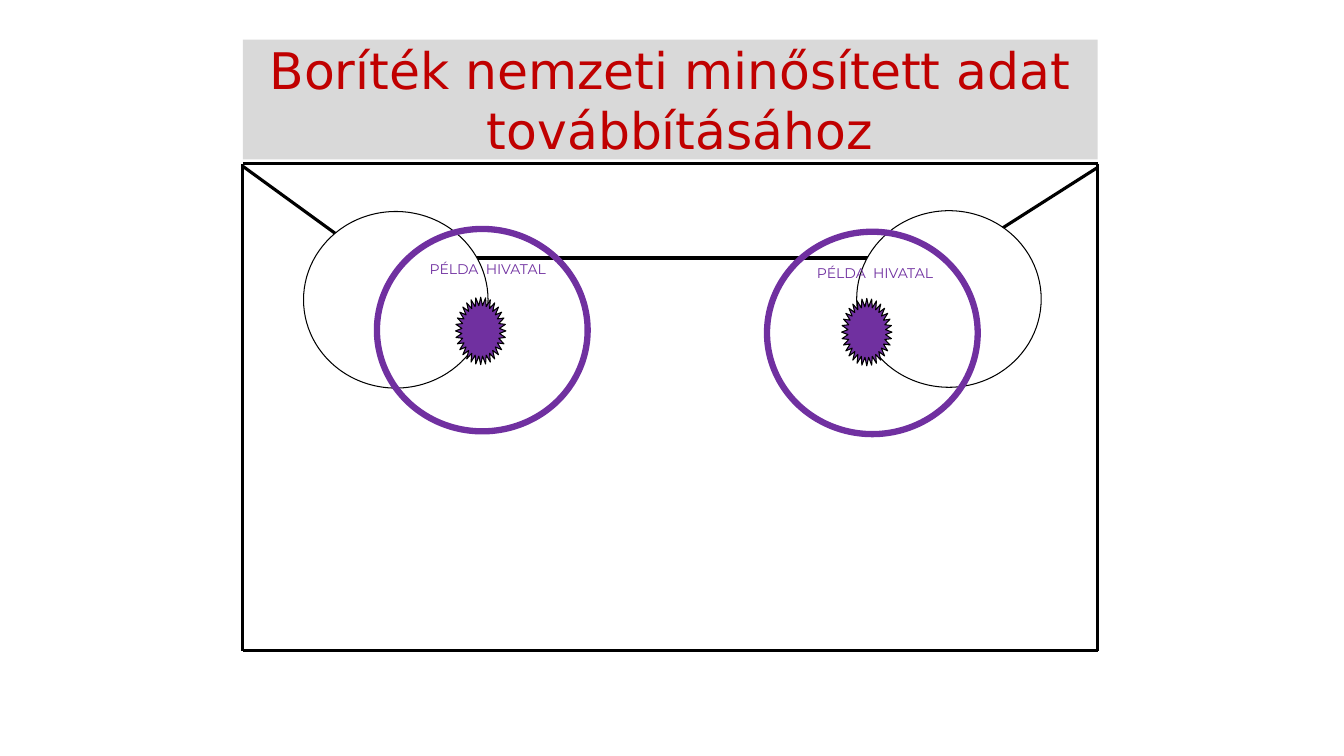
from pptx import Presentation
from pptx.dml.color import RGBColor
from pptx.enum.shapes import MSO_CONNECTOR, MSO_SHAPE
from pptx.enum.text import MSO_ANCHOR, PP_ALIGN
from pptx.oxml.ns import qn
from pptx.util import Cm, Pt
from lxml.etree import SubElement

TITLE = "Boríték nemzeti minősített adat továbbításához"
OFFICE = "PÉLDA  HIVATAL"
BLACK, WHITE, GRAY = "000000", "FFFFFF", "D9D9D9"
PURPLE, RED = "7030A0", "C00000"

# Lengths in cm
WIDE, HIGH = 33.87, 19.05
LEFT, TOP, RIGHT, BOTTOM = 6.12, 4.12, 27.66, 16.4
FOLD = 6.5
EDGES = [
    (LEFT, TOP, RIGHT, TOP),
    (LEFT, BOTTOM, RIGHT, BOTTOM),
    (LEFT, TOP, LEFT, BOTTOM),
    (RIGHT, TOP, RIGHT, BOTTOM),
]
FLAP = [
    (LEFT, 4.19, 9.3, FOLD),
    (9.3, FOLD, 24.15, FOLD),
    (RIGHT, 4.22, 24.08, FOLD),
]
DISCS = [(7.65, 5.33), (21.59, 5.31)]
DISC = (4.65, 4.45)
# Corners of ring, label and star for each seal
SEALS = [
    ((9.5, 5.77), (10.36, 6.45), (11.48, 7.49)),
    ((19.33, 5.84), (20.12, 6.53), (21.21, 7.52)),
]
RING, LABEL, STAR = (5.31, 5.1), (3.86, 3.71), (1.27, 1.7)


def tint(code):
    return RGBColor.from_string(code)


def draw_line(ends):
    line = slide.shapes.add_connector(MSO_CONNECTOR.STRAIGHT, *map(Cm, ends))
    line.line.color.rgb = tint(BLACK)
    line.line.width = Pt(2.25)
    SubElement(line._element.spPr, qn("a:effectLst"))


def draw_shape(kind, spot, size, fill=None, edge=None, width=0.75):
    shape = slide.shapes.add_shape(kind, *map(Cm, spot + size))
    shape.shadow.inherit = False
    if fill:
        shape.fill.solid()
        shape.fill.fore_color.rgb = tint(fill)
    else:
        shape.fill.background()
    if edge:
        shape.line.color.rgb = tint(edge)
        shape.line.width = Pt(width)
    else:
        shape.line.fill.background()
    return shape


def write(shape, text, color, anchor, wrap, **style):
    frame = shape.text_frame
    frame.word_wrap = wrap
    frame.vertical_anchor = anchor
    para = frame.paragraphs[0]
    para.alignment = PP_ALIGN.CENTER
    run = para.add_run()
    run.text = text
    for key, value in style.items():
        setattr(run.font, key, value)
    run.font.color.rgb = tint(color)
    return para


deck = Presentation()
deck.slide_width, deck.slide_height = Cm(WIDE), Cm(HIGH)
slide = deck.slides.add_slide(deck.slide_layouts[6])

for ends in EDGES + FLAP:
    draw_line(ends)

for spot in DISCS:
    draw_shape(MSO_SHAPE.OVAL, spot, DISC, WHITE, BLACK)

for ring, label, star in SEALS:
    draw_shape(MSO_SHAPE.OVAL, ring, RING, edge=PURPLE, width=4.5)
    box = slide.shapes.add_textbox(*map(Cm, label + LABEL))
    write(box, OFFICE, PURPLE, MSO_ANCHOR.TOP, False, name="Montserrat", size=Pt(10))
    draw_shape(MSO_SHAPE.STAR_32_POINT, star, STAR, PURPLE, BLACK)

banner = draw_shape(MSO_SHAPE.RECTANGLE, (LEFT, 1), (RIGHT - LEFT, 3.02), GRAY)
para = write(banner, TITLE, RED, MSO_ANCHOR.MIDDLE, True, name="DejaVu Sans", size=Pt(36))
hang = Cm(0.5)
for key, value in {"marL": hang, "indent": -hang}.items():
    para._p.get_or_add_pPr().set(key, str(value))

deck.save("out.pptx")
